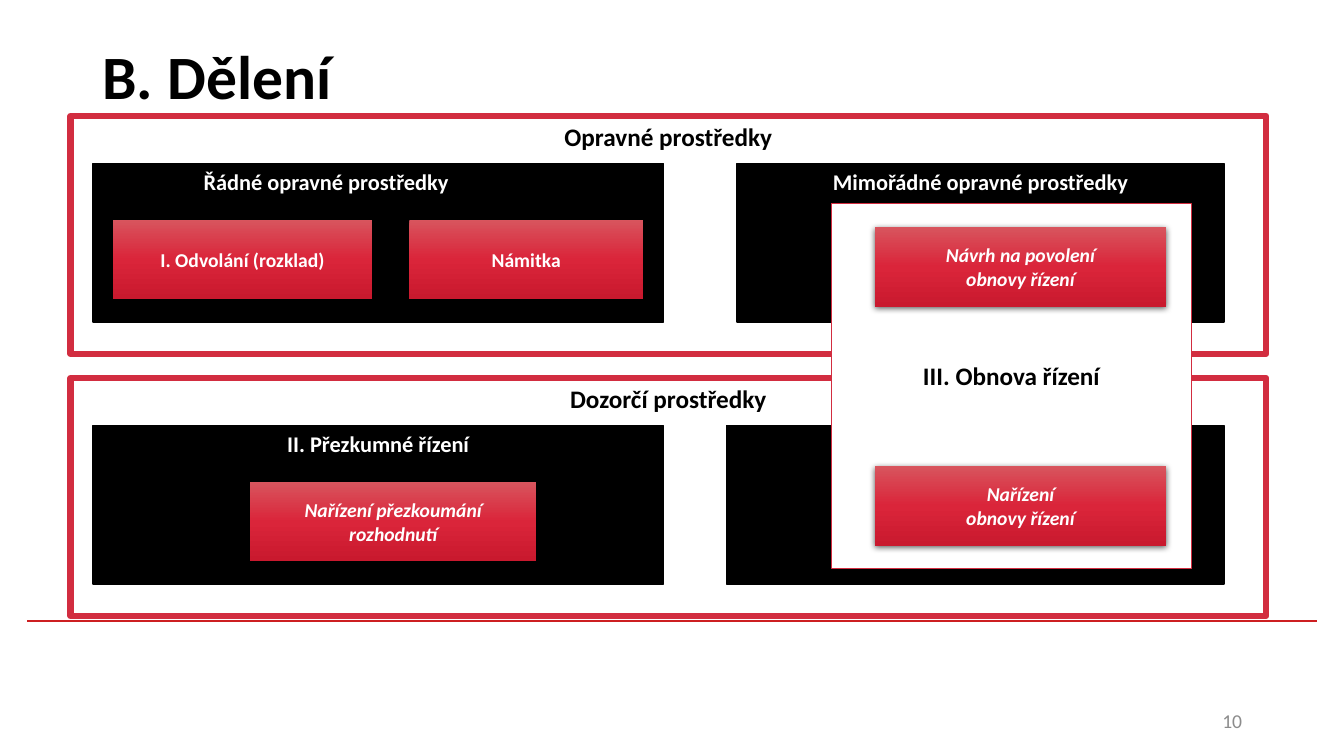
from copy import deepcopy

from lxml.etree import SubElement
from pptx import Presentation
from pptx.dml.color import RGBColor
from pptx.enum.shapes import MSO_CONNECTOR, MSO_SHAPE
from pptx.enum.text import MSO_ANCHOR, PP_ALIGN
from pptx.oxml.ns import qn
from pptx.util import Pt

COLORS = {
    "black": "000000",
    "white": "FFFFFF",
    "frame": "D22D40",
    "rule": "CD1F21",
    "number": "8C8C8C",
    "card_top": "D8555E",
    "card_middle": "DA253A",
    "card_bottom": "C9192E",
}
FONT = "Calibri"
CARD_HEIGHT = 57


def color(name):
    return RGBColor.from_string(COLORS[name])


def write_lines(frame, lines, size, color_name, bold=True, italic=False,
                align=PP_ALIGN.CENTER, anchor=MSO_ANCHOR.TOP):
    frame.vertical_anchor = anchor
    for index, line in enumerate(lines):
        para = frame.paragraphs[0] if index == 0 else frame.add_paragraph()
        para.alignment = align
        span = para.add_run()
        span.text = line
        font = span.font
        font.name, font.size, font.bold, font.italic = FONT, Pt(size), bold, italic
        font.color.rgb = color(color_name)


def add_rectangle(page, box):
    shape = page.shapes.add_shape(MSO_SHAPE.RECTANGLE, *map(Pt, box))
    shape.shadow.inherit = False
    shape.text_frame.word_wrap = True
    return shape


def add_panel(page, box, fill, line, line_width):
    shape = add_rectangle(page, box)
    shape.fill.solid()
    shape.fill.fore_color.rgb = color(fill)
    shape.line.color.rgb = color(line)
    shape.line.width = Pt(line_width)
    return shape


def add_card_gradient(shape):
    shape.fill.gradient()
    shape.fill.gradient_angle = 270
    stop_list = shape._element.spPr.find(qn("a:gradFill")).find(qn("a:gsLst"))
    stop_list.insert(1, deepcopy(stop_list[0]))
    shades = ("card_top", "card_middle", "card_bottom")
    for index, (stop, shade) in enumerate(zip(shape.fill.gradient_stops, shades)):
        stop.position = index / 2
        stop.color.rgb = color(shade)


def add_card_shadow(shape):
    effects = shape._element.spPr.find(qn("a:effectLst"))
    shadow = SubElement(effects, qn("a:outerShdw"), blurRad=str(Pt(4.5)),
                        dist=str(Pt(1.5)), dir="5400000", rotWithShape="0")
    shade = SubElement(shadow, qn("a:srgbClr"), val=COLORS["black"])
    SubElement(shade, qn("a:alpha"), val="63000")


def add_card(page, box, lines, italic=False):
    card = add_rectangle(page, box)
    add_card_gradient(card)
    card.line.fill.background()
    add_card_shadow(card)
    write_lines(card.text_frame, lines, 14, "white", italic=italic,
                anchor=MSO_ANCHOR.MIDDLE)
    card.text_frame.word_wrap = False


def add_block(page, box, heading, cards=(), italic=False, indent=None):
    """Black block; each card is (offset from the left, width, lines)."""
    block = add_panel(page, box, "black", "black", 1)
    if heading:
        write_lines(block.text_frame, [heading], 16, "white",
                    align=PP_ALIGN.CENTER if indent is None else PP_ALIGN.LEFT)
    if indent is not None:
        block.text_frame.margin_left = Pt(indent)
    left, top = box[:2]
    for offset, width, lines in cards:
        add_card(page, (left + offset, top + 40.2, width, CARD_HEIGHT), lines, italic)


def add_remedy_group(page, box, heading, left_block, right_heading, right_width):
    """Framed panel with a left block and a block aligned to the right."""
    left, top, width, height = box
    panel = add_panel(page, box, "white", "frame", 4.5)
    write_lines(panel.text_frame, [heading], 18, "black")
    block_top, block_height = top + 33.8, 113.4
    add_block(page, (left + 16, block_top, 407.5, block_height), **left_block)
    right_edge = left + width - 30
    add_block(page, (right_edge - right_width, block_top, right_width, block_height),
              right_heading)


def add_renewal(page, box):
    left, top, width, height = box
    panel = add_panel(page, box, "white", "frame", 1)
    panel.text_frame.margin_top = Pt(112)
    write_lines(panel.text_frame, ["III. Obnova řízení"], 18, "black")
    for offset, first_line in ((16.5, "Návrh na povolení"), (187.2, "Nařízení")):
        add_card(page, (left + 31, top + offset, 208, CARD_HEIGHT),
                 [first_line, "obnovy řízení"], italic=True)


def add_title(page, box):
    title = page.shapes.title
    title.left, title.top, title.width, title.height = map(Pt, box)
    write_lines(title.text_frame, ["B. Dělení"], 44, "black",
                align=PP_ALIGN.LEFT, anchor=MSO_ANCHOR.MIDDLE)


def add_footer(page, box):
    left, top, width, height = box
    rule = page.shapes.add_connector(MSO_CONNECTOR.STRAIGHT, Pt(left), Pt(top),
                                     Pt(left + width), Pt(top))
    rule.line.color.rgb = color("rule")
    rule.line.width = Pt(1.5)
    SubElement(rule._element.spPr, qn("a:effectLst"))
    number = page.shapes.add_textbox(Pt(left + 659), Pt(top + 57), Pt(216), Pt(28.8))
    number.text_frame.word_wrap = True
    write_lines(number.text_frame, ["10"], 14, "number", bold=False,
                align=PP_ALIGN.RIGHT, anchor=MSO_ANCHOR.MIDDLE)


def main():
    deck = Presentation()
    deck.slide_width, deck.slide_height = Pt(960), Pt(540)
    page = deck.slides.add_slide(deck.slide_layouts[5])
    add_title(page, (66, 1.5, 828, 104.5))
    add_footer(page, (19.4, 443.3, 921.6, 96.7))
    add_remedy_group(
        page, (50.4, 270, 854, 170), "Dozorčí prostředky",
        {"heading": "II. Přezkumné řízení", "italic": True,
         "cards": [(112.3, 204.5, ["Nařízení přezkoumání", "rozhodnutí"])]},
        None, 355.5)
    add_remedy_group(
        page, (50.4, 82.8, 854, 170), "Opravné prostředky",
        {"heading": "Řádné opravné prostředky", "indent": 79,
         "cards": [(14.4, 185, ["I. Odvolání (rozklad)"]),
                   (226, 167, ["Námitka"])]},
        "Mimořádné opravné prostředky", 348)
    add_renewal(page, (594, 145.5, 257, 260.5))
    deck.save("out.pptx")


if __name__ == "__main__":
    main()
